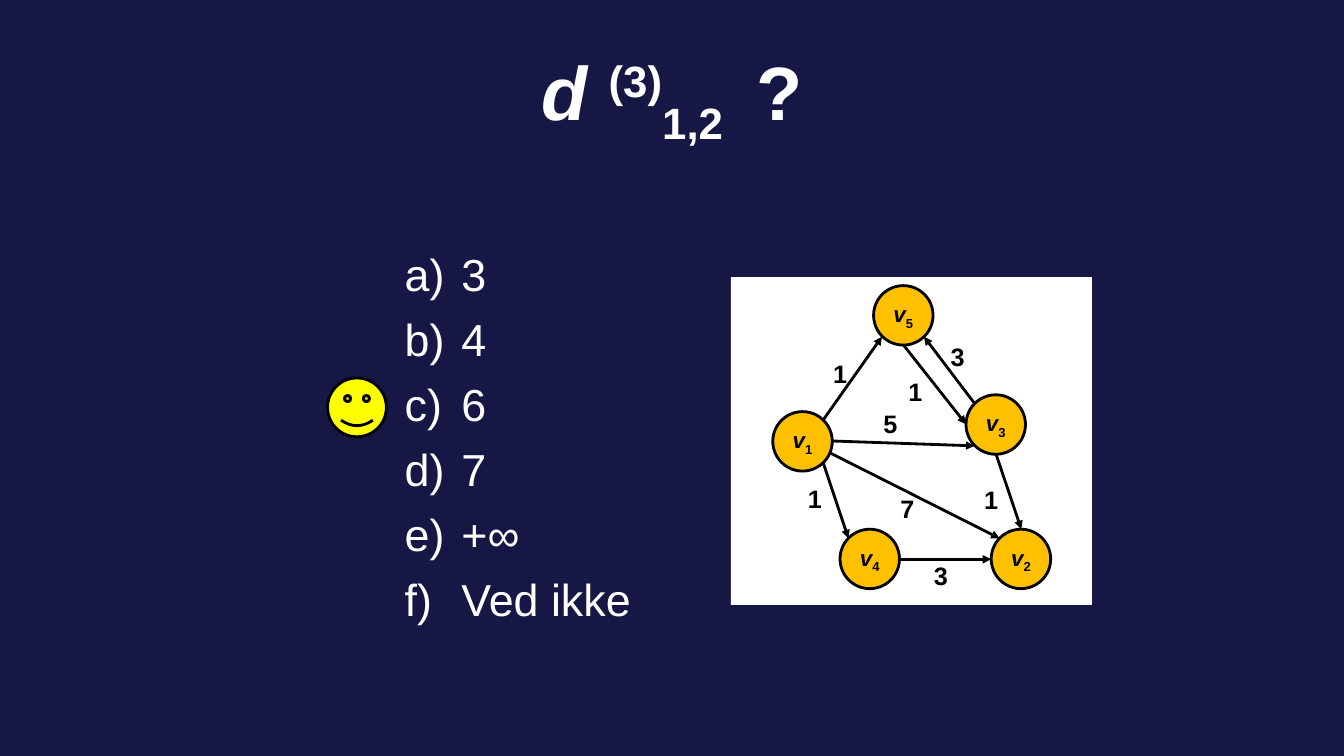
from dataclasses import dataclass

from lxml import etree
from pptx import Presentation
from pptx.dml.color import RGBColor
from pptx.enum.shapes import MSO_CONNECTOR as Connector, MSO_SHAPE as Shape
from pptx.enum.text import MSO_ANCHOR as Anchor, MSO_AUTO_SIZE as AutoSize, PP_ALIGN as Align
from pptx.oxml.ns import qn
from pptx.util import Pt


@dataclass(frozen=True)
class Theme:
    font: str = "Arial"
    background: str = "171745"
    light: str = "FFFFFF"
    dark: str = "000000"
    node: str = "FFC000"
    smiley: str = "FFFF00"
    title_size: float = 54
    option_size: float = 32
    label_size: float = 18
    node_size: float = 16
    line_width: float = 2


class SlideBuilder:
    def __init__(self, slide, theme):
        self.slide = slide
        self.theme = theme
        fill = slide.background.fill
        fill.solid()
        fill.fore_color.rgb = RGBColor.from_string(theme.background)

    def style_run(self, run, size, color, bold=False, italic=False, baseline=0):
        font = run.font
        font.name, font.size = self.theme.font, Pt(size)
        font.bold, font.italic = bold, italic
        font.color.rgb = RGBColor.from_string(color)
        if baseline:
            run._r.get_or_add_rPr().set("baseline", str(baseline * 1000))

    def add_runs(self, paragraph, parts, size, color):
        """Each part is text, italic, baseline shift in percent."""
        paragraph.alignment = Align.CENTER
        for text, italic, baseline in parts:
            run = paragraph.add_run()
            run.text = text
            self.style_run(run, size, color, True, italic, baseline)

    def title(self, left, top, width, height, parts):
        title = self.slide.shapes.title
        title.left, title.top = Pt(left), Pt(top)
        title.width, title.height = Pt(width), Pt(height)
        title.text_frame.vertical_anchor = Anchor.MIDDLE
        self.add_runs(title.text_frame.paragraphs[0], parts,
                      self.theme.title_size, self.theme.light)

    def shape(self, kind, left, top, width, height, color, outlined=True):
        shape = self.slide.shapes.add_shape(kind, Pt(left), Pt(top), Pt(width), Pt(height))
        shape.shadow.inherit = False
        shape.fill.solid()
        shape.fill.fore_color.rgb = RGBColor.from_string(color)
        if outlined:
            shape.line.color.rgb = RGBColor.from_string(self.theme.dark)
            shape.line.width = Pt(self.theme.line_width)
        else:
            shape.line.fill.background()
        return shape

    def node(self, index, left, top, diameter=42.5):
        shape = self.shape(Shape.OVAL, left, top, diameter, diameter, self.theme.node)
        frame = shape.text_frame
        frame.word_wrap = False
        frame.vertical_anchor = Anchor.MIDDLE
        frame.margin_left = frame.margin_right = frame.margin_top = frame.margin_bottom = 0
        self.add_runs(frame.paragraphs[0], [("v", True, 0), (str(index), False, -25)],
                      self.theme.node_size, self.theme.dark)

    def arrow(self, start, end):
        points = [Pt(value) for value in (*start, *end)]
        connector = self.slide.shapes.add_connector(Connector.STRAIGHT, *points)
        connector.line.color.rgb = RGBColor.from_string(self.theme.dark)
        connector.line.width = Pt(self.theme.line_width)
        etree.SubElement(connector.line._get_or_add_ln(), qn("a:tailEnd"), type="triangle")
        etree.SubElement(connector._element.spPr, qn("a:effectLst"))

    def text_box(self, left, top, width, height):
        box = self.slide.shapes.add_textbox(Pt(left), Pt(top), Pt(width), Pt(height))
        box.text_frame.word_wrap = True
        return box.text_frame

    def weight(self, text, left, top, width=24, align=Align.LEFT):
        frame = self.text_box(left, top, width, 29)
        frame.auto_size = AutoSize.SHAPE_TO_FIT_TEXT
        frame.text = text
        paragraph = frame.paragraphs[0]
        paragraph.alignment = align
        self.style_run(paragraph.runs[0], self.theme.label_size, self.theme.dark, bold=True)

    def options(self, left, top, width, height, answers, indent=40.5):
        frame = self.text_box(left, top, width, height)
        frame.text = "\n".join(answers)
        for paragraph in frame.paragraphs:
            paragraph.space_before = Pt(7.9)
            self.style_run(paragraph.runs[0], self.theme.option_size, self.theme.light)
            properties = paragraph._p.get_or_add_pPr()
            properties.set("marL", str(Pt(indent)))
            properties.set("indent", str(-Pt(indent)))
            etree.SubElement(properties, qn("a:buFont"), typeface=self.theme.font)
            etree.SubElement(properties, qn("a:buAutoNum"), type="alphaLcParenR")


def main():
    presentation = Presentation()
    presentation.slide_width, presentation.slide_height = Pt(960), Pt(540)
    slide = presentation.slides.add_slide(presentation.slide_layouts[5])
    theme = Theme()
    builder = SlideBuilder(slide, theme)

    # Question
    builder.title(120, 18, 720, 102, [
        ("d ", True, 0), ("(3)", False, 30), ("1,2 ", False, -25), (" ?", False, 0)])

    # Graph: panel, nodes and arrows; v1 covers the start of its arrow to v2
    builder.shape(Shape.RECTANGLE, 522, 198, 258, 234, theme.light, outlined=False)
    for index, left, top in [(5, 624, 204), (4, 600, 378), (3, 690, 282), (2, 708, 378)]:
        builder.node(index, left, top)
    arrows = [
        ((696, 288), (660, 240.5)),      # v3 to v5
        ((588, 300), (630, 240.5)),      # v1 to v5
        ((588, 330.5), (606, 384.5)),    # v1 to v4
        ((645, 246), (690, 303)),        # v5 to v3
        ((642.5, 399.5), (708, 399.5)),  # v4 to v2
        ((594.5, 315), (696, 318.5)),    # v1 to v3
        ((711.5, 324.5), (729.5, 378)),  # v3 to v2
        ((582, 318), (714, 384.5)),      # v1 to v2
    ]
    for start, end in arrows:
        builder.arrow(start, end)
    builder.node(1, 552, 294)

    # Edge weights
    for text, left, top in [("1", 570, 342), ("1", 588, 252.5), ("5", 624, 288),
                            ("3", 660, 396.5), ("3", 672, 240), ("7", 636, 349)]:
        builder.weight(text, left, top)
    builder.weight("1", 672, 342.5, 48, Align.RIGHT)
    builder.weight("1", 624, 265, 42, Align.RIGHT)

    # Answers, with the right one marked
    builder.options(282, 173, 196.5, 150, ["3", "4", "6", "7", "+∞", "Ved ikke"])
    builder.shape(Shape.SMILEY_FACE, 234, 270, 42, 42, theme.smiley)

    presentation.save("out.pptx")


if __name__ == "__main__":
    main()
